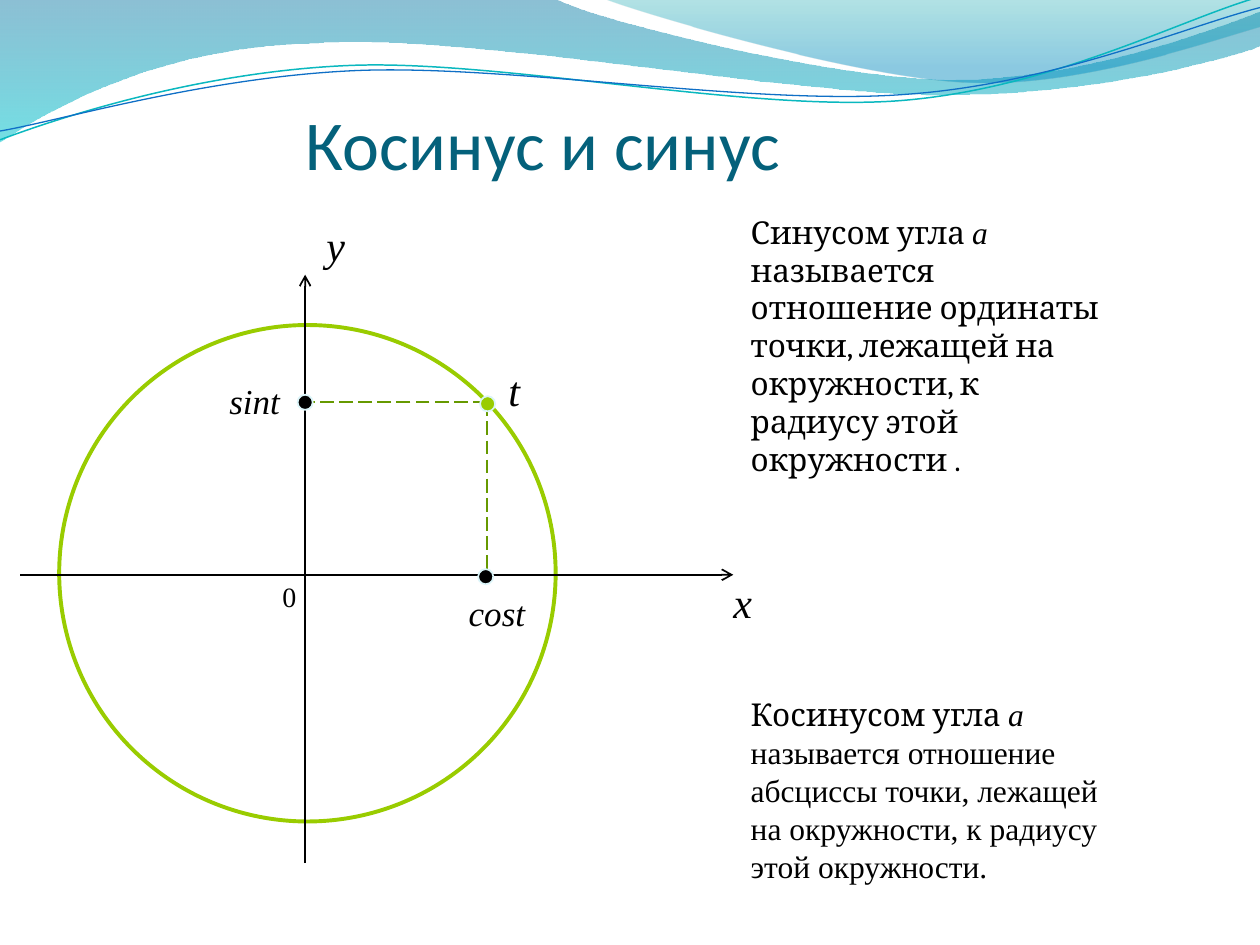
from dataclasses import dataclass
from math import cos, radians, sin
from typing import NamedTuple

from lxml import etree
from pptx import Presentation
from pptx.dml.color import RGBColor
from pptx.enum.dml import MSO_LINE
from pptx.enum.shapes import MSO_CONNECTOR, MSO_SHAPE
from pptx.enum.text import MSO_ANCHOR, MSO_AUTO_SIZE, PP_ALIGN
from pptx.oxml.ns import qn
from pptx.util import Inches, Pt

STRAIGHT = MSO_CONNECTOR.STRAIGHT
LONG_DASH = MSO_LINE.LONG_DASH
ELLIPSE = MSO_SHAPE.OVAL
DOT = MSO_SHAPE.FLOWCHART_CONNECTOR
TOP, BOTTOM = MSO_ANCHOR.TOP, MSO_ANCHOR.BOTTOM
LEFT, CENTER = PP_ALIGN.LEFT, PP_ALIGN.CENTER
GROW, FIXED = MSO_AUTO_SIZE.SHAPE_TO_FIT_TEXT, MSO_AUTO_SIZE.NONE

BLACK = RGBColor(0x00, 0x00, 0x00)
TITLE_BLUE = RGBColor(0x04, 0x61, 0x7B)
LIME = RGBColor(0x99, 0xCC, 0x00)
OLIVE = RGBColor(0x66, 0x99, 0x00)
PALE_BLUE = RGBColor(0xDB, 0xF5, 0xF9)
WAVE_BLUE = RGBColor(0x00, 0x74, 0xA1)
WAVE_CYAN = RGBColor(0x00, 0xC6, 0xCF)
WAVE_TEAL = RGBColor(0x00, 0xA1, 0xA9)
WAVE_SKY = RGBColor(0x00, 0x8B, 0xBF)
STROKE_TEAL = RGBColor(0x0A, 0xB8, 0xBF)
STROKE_BLUE = RGBColor(0x0F, 0x6F, 0xC6)

SERIF, BODY, HEADING = "Times New Roman", "Cambria", "Calibri"
COLUMNS, ROWS = 100, 75
DOT_SIZE = 1.2
STROKE_TILT = -2.7

presentation = Presentation()
presentation.slide_width = Inches(10)
presentation.slide_height = Inches(7.5)
slide = presentation.slides.add_slide(presentation.slide_layouts[6])


class Point(NamedTuple):
    column: float
    row: float


class Box(NamedTuple):
    column: float
    row: float
    columns: float
    rows: float


class Insets(NamedTuple):
    left: float = 1
    top: float = 0.5
    right: float = 1
    bottom: float = 0.5


class Stop(NamedTuple):
    position: float
    color: RGBColor
    opacity: int


class Run(NamedTuple):
    text: str
    font: str = SERIF
    italic: bool = False


@dataclass
class Label:
    box: Box
    runs: list[Run]
    size: float
    insets: Insets = Insets(0, 0, 0, 0)
    color: RGBColor = BLACK
    anchor: MSO_ANCHOR = TOP
    alignment: PP_ALIGN = LEFT
    auto_size: MSO_AUTO_SIZE = GROW


@dataclass
class Wave:
    start: Point
    segments: list[tuple]
    stops: tuple = ()
    color: RGBColor | None = None
    weight: float = 0
    tilt: float = 0
    pivot: Point = Point(0, 0)


def across(columns: float) -> int:
    return round(presentation.slide_width * columns / COLUMNS)


def down(rows: float) -> int:
    return round(presentation.slide_height * rows / ROWS)


def place(box: Box) -> tuple[int, int, int, int]:
    return across(box.column), down(box.row), across(box.columns), down(box.rows)


def untilted(wave: Wave, column: float, row: float) -> tuple[int, int]:
    angle = radians(-wave.tilt)
    x, y = column - wave.pivot.column, row - wave.pivot.row
    return (across(wave.pivot.column + x * cos(angle) - y * sin(angle)),
            down(wave.pivot.row + x * sin(angle) + y * cos(angle)))


def draw_wave(wave: Wave) -> None:
    segments = [[untilted(wave, *segment[i:i + 2]) for i in range(0, len(segment), 2)]
                for segment in wave.segments]
    builder = slide.shapes.build_freeform(*untilted(wave, *wave.start), scale=1.0)
    builder.add_line_segments([points[-1] for points in segments], close=bool(wave.stops))
    shape = builder.convert_to_shape()
    for step, points in zip(list(shape.element.spPr.iter(qn("a:lnTo"))), segments):
        if len(points) == 3:
            curve = etree.Element(qn("a:cubicBezTo"))
            for x, y in points:
                etree.SubElement(curve, qn("a:pt"), x=str(x - shape.left), y=str(y - shape.top))
            step.getparent().replace(step, curve)
    shape.rotation = wave.tilt
    shape.shadow.inherit = False
    if not wave.stops:
        shape.fill.background()
        shape.line.color.rgb = wave.color
        shape.line.width = Pt(wave.weight)
        return
    shape.line.fill.background()
    shape.fill.gradient()
    shape.fill.gradient_angle = 270
    for gradient_stop, stop in zip(shape.fill.gradient_stops, wave.stops):
        gradient_stop.position = stop.position
        gradient_stop.color.rgb = stop.color
    colors = shape.element.spPr.iterfind(f"{qn('a:gradFill')}//{qn('a:srgbClr')}")
    for color, stop in zip(colors, wave.stops):
        etree.SubElement(color, qn("a:alpha"), val=str(stop.opacity * 1000))


def draw_round(kind: MSO_SHAPE, box: Box, fill: RGBColor | None, line: RGBColor, weight: float) -> None:
    shape = slide.shapes.add_shape(kind, *place(box))
    shape.shadow.inherit = False
    if fill is None:
        shape.fill.background()
    else:
        shape.fill.solid()
        shape.fill.fore_color.rgb = fill
    shape.line.color.rgb = line
    shape.line.width = Pt(weight)


def draw_dot(center: Point, fill: RGBColor) -> None:
    box = Box(center.column - DOT_SIZE / 2, center.row - DOT_SIZE / 2, DOT_SIZE, DOT_SIZE)
    draw_round(DOT, box, fill, PALE_BLUE, 1)


def draw_line(start: Point, end: Point, color: RGBColor, arrow: bool) -> None:
    connector = slide.shapes.add_connector(
        STRAIGHT, across(start.column), down(start.row), across(end.column), down(end.row))
    connector.line.color.rgb = color
    connector.line.width = Pt(1)
    if arrow:
        etree.SubElement(connector.line._get_or_add_ln(), qn("a:tailEnd"), type="arrow")
    else:
        connector.line.dash_style = LONG_DASH
    etree.SubElement(connector._element.spPr, qn("a:effectLst"))


def draw_label(label: Label) -> None:
    frame = slide.shapes.add_textbox(*place(label.box)).text_frame
    frame.word_wrap = True
    frame.auto_size = label.auto_size
    frame.vertical_anchor = label.anchor
    frame.margin_left, frame.margin_right = across(label.insets.left), across(label.insets.right)
    frame.margin_top, frame.margin_bottom = down(label.insets.top), down(label.insets.bottom)
    paragraph = frame.paragraphs[0]
    paragraph.alignment = label.alignment
    for part in label.runs:
        run = paragraph.add_run()
        run.text, run.font.name, run.font.italic = part.text, part.font, part.italic
        run.font.size = Pt(label.size)
        run.font.color.rgb = label.color


WAVES = [
    Wave(Point(0, 0), [(44, -0.1), (47.6, 1.7, 66.4, 6.3, 75.8, 6.3), (85.3, 6.3, 95.8, 2.6, 100, 0.9),
                       (100.1, 3.6), (98.3, 4.4, 87, 7.6, 74.6, 7.5), (62.2, 7.5, 38.2, 2.8, 25.7, 3.4),
                       (12.9, 3.6, 4.6, 8.3, -0.1, 11.3), (0, 0)],
         stops=(Stop(0, WAVE_BLUE, 45), Stop(1, WAVE_CYAN, 55))),
    Wave(Point(47.9, -0.1), [(50.9, 1.1, 68.2, 6.2, 76.9, 6.5), (85.6, 6.9, 96.1, 3.2, 100, 2.1),
                             (100, 0), (47.9, -0.1)],
         stops=(Stop(0, WAVE_TEAL, 30), Stop(0.8, WAVE_SKY, 45))),
    Wave(Point(0, 11.1), [(4.8, 9.3, 15.8, 5.7, 27.7, 5.2), (39.5, 4.7, 59.3, 8.9, 71.3, 8),
                          (83.3, 7.1, 93.8, 1.5, 99.8, -0.2)],
         color=STROKE_TEAL, weight=0.85, tilt=STROKE_TILT, pivot=Point(49.9, 5.75)),
    Wave(Point(0, 10.4), [(4.7, 9.6, 16.4, 6.1, 28.3, 5.6), (40.3, 5.1, 59.7, 8.4, 71.7, 7.5),
                          (83.6, 6.7, 94.1, 2.1, 100, 0.6)],
         color=STROKE_BLUE, weight=0.75, tilt=STROKE_TILT, pivot=Point(49.95, 5.9)),
]
ORIGIN = Point(24.22, 45.62)
ANGLE_POINT = Point(38.63, 31.93)
LABELS = [
    Label(Box(24.25, 4.65, 58.6, 10), [Run("Косинус и синус", HEADING)], 40, Insets(0, 0.5, 0, 0),
          TITLE_BLUE, BOTTOM, auto_size=FIXED),
    Label(Box(22.4, 46, 4.2, 2.7), [Run("0")], 16),
    Label(Box(58.2, 45.75, 4.2, 4), [Run("x", italic=True)], 24),
    Label(Box(25.1, 17, 4.2, 4.8), [Run("y", italic=True)], 24, Insets(0.8, 0.4, 0.4, 0.4)),
    Label(Box(37.2, 46.95, 5.8, 3.3), [Run("cost", italic=True)], 20),
    Label(Box(18.2, 30.1, 4.2, 3.3), [Run("sint", italic=True)], 20),
    Label(Box(38.2, 28.45, 5.2, 5), [Run("t", italic=True)], 24, Insets(), alignment=CENTER),
    Label(Box(58.6, 16.4, 29.7, 22.2),
          [Run("Синусом угла ", BODY), Run("a ", italic=True),
           Run("называется отношение ординаты точки, лежащей на окружности, к радиусу этой окружности .", BODY)],
          18, Insets()),
    Label(Box(58.6, 54.7, 30.5, 16.2),
          [Run("Косинусом угла ", BODY), Run("a ", italic=True),
           Run("называется отношение абсциссы точки, лежащей на окружности, к радиусу этой окружности.")],
          18, Insets()),
]

for wave in WAVES:
    draw_wave(wave)
draw_label(LABELS[0])
draw_round(ELLIPSE, Box(4.7, 25.8, 39.4, 39.4), None, LIME, 2.25)
draw_line(Point(ORIGIN.column, 68.5), Point(ORIGIN.column, 21.8), BLACK, arrow=True)
draw_line(Point(1.6, ORIGIN.row), Point(58.2, ORIGIN.row), BLACK, arrow=True)
draw_line(ANGLE_POINT, Point(ANGLE_POINT.column, 45.9), OLIVE, arrow=False)
draw_line(ANGLE_POINT, Point(ORIGIN.column, ANGLE_POINT.row), OLIVE, arrow=False)
draw_dot(Point(38.55, 45.77), BLACK)
draw_dot(Point(ORIGIN.column, ANGLE_POINT.row), BLACK)
draw_dot(Point(38.7, 32.05), LIME)
for label in LABELS[1:]:
    draw_label(label)

presentation.save("out.pptx")
